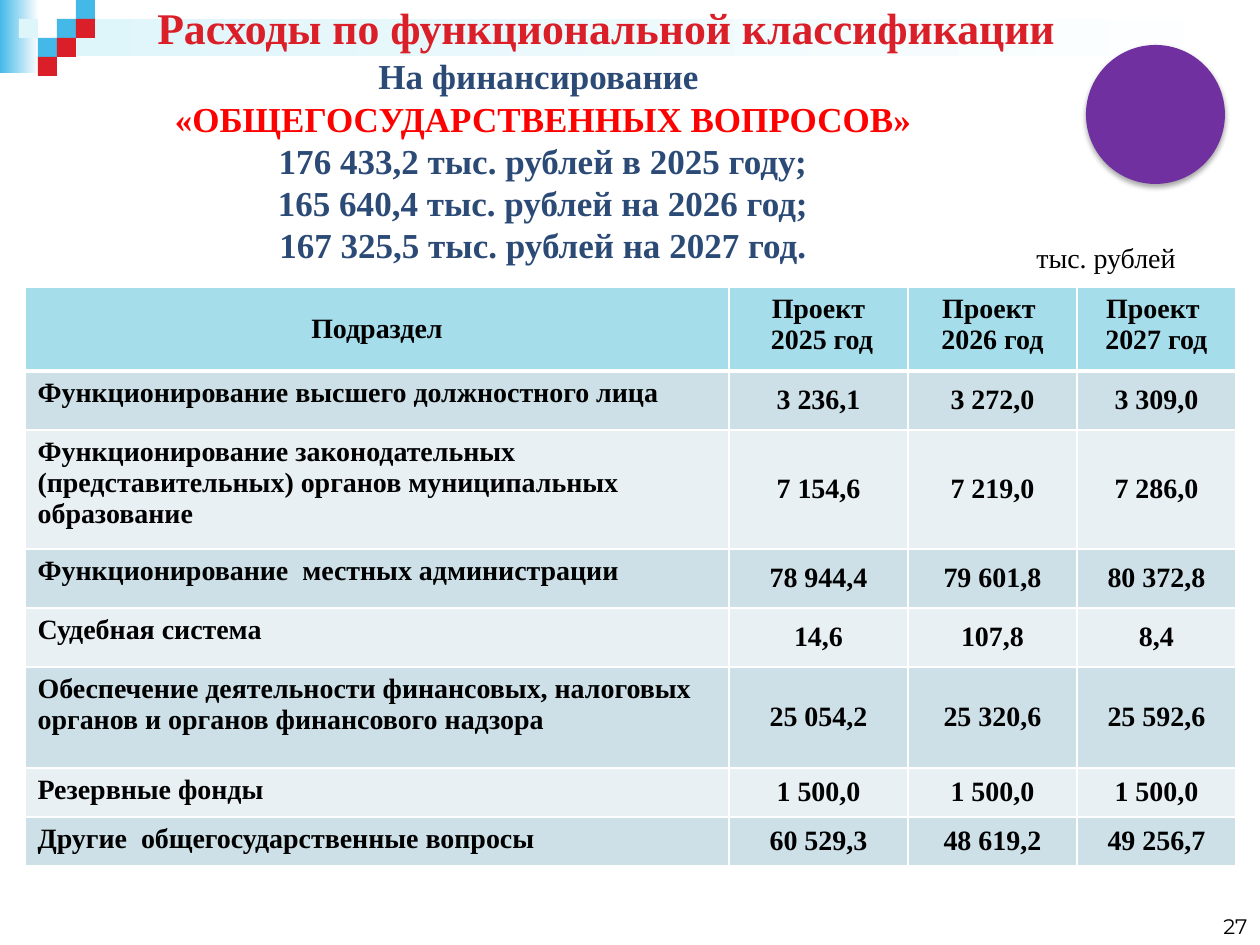
from lxml import etree
from pptx import Presentation
from pptx.dml.color import RGBColor
from pptx.enum.shapes import MSO_SHAPE
from pptx.enum.text import MSO_ANCHOR, PP_ALIGN
from pptx.oxml import parse_xml
from pptx.oxml.ns import nsdecls, qn
from pptx.util import Pt

RECT, OVAL = MSO_SHAPE.RECTANGLE, MSO_SHAPE.OVAL
TOP, MIDDLE, BOTTOM = MSO_ANCHOR.TOP, MSO_ANCHOR.MIDDLE, MSO_ANCHOR.BOTTOM
LEFT, CENTER, RIGHT = PP_ALIGN.LEFT, PP_ALIGN.CENTER, PP_ALIGN.RIGHT

BLACK = RGBColor(0x00, 0x00, 0x00)
WHITE = RGBColor(0xFF, 0xFF, 0xFF)
BLUE = RGBColor(0x44, 0xB9, 0xE8)
PALE = RGBColor(0xDE, 0xF5, 0xFA)
CRIMSON = RGBColor(0xDA, 0x1F, 0x28)
RED = RGBColor(0xFF, 0x00, 0x00)
NAVY = RGBColor(0x2B, 0x4A, 0x76)
PURPLE = RGBColor(0x70, 0x30, 0xA0)
HEAD = RGBColor(0xA6, 0xDD, 0xEA)
BANDS = [RGBColor(0xCD, 0xE0, 0xE8), RGBColor(0xE8, 0xF0, 0xF4)]

SERIF = "Times New Roman"
SCALE = 914400 / 126


def px(*values):
    return [round(v * SCALE) for v in values]


def write(tf, lines, align, colors, **fmt):
    """Put one paragraph per line; colors holds one colour for each line."""
    tf.word_wrap = True
    for i, (line, color) in enumerate(zip(lines, colors)):
        p = tf.paragraphs[0] if i == 0 else tf.add_paragraph()
        p.alignment = align
        r = p.add_run()
        r.text = line
        r.font.color.rgb = color
        for name, value in fmt.items():
            setattr(r.font, name, value)


prs = Presentation()
prs.slide_width, prs.slide_height = px(1260, 945)
s = prs.slides.add_slide(prs.slide_layouts[5])

# Gradient bands at the top
for box, color in [((0, 0, 39, 73), BLUE), ((57, 19, 1203, 37), PALE)]:
    sp = s.shapes.add_shape(RECT, *px(*box))
    sp.shadow.inherit = False
    sp.line.fill.background()
    sp.fill.gradient()
    sp.fill.gradient_angle = 0
    for stop, tone, position in zip(sp.fill.gradient_stops, (color, WHITE), (0, 1)):
        stop.color.rgb, stop.position = tone, position

# Corner mosaic: column, row, colour
TILE = 19
for col, row, color in [(3, 1, BLUE), (4, 0, BLUE), (4, 1, CRIMSON), (2, 2, BLUE),
                        (1, 1, PALE), (3, 2, CRIMSON), (2, 3, CRIMSON)]:
    sp = s.shapes.add_shape(RECT, *px(col * TILE, row * TILE, TILE, TILE))
    sp.shadow.inherit = False
    sp.fill.solid()
    sp.fill.fore_color.rgb = color
    sp.line.fill.background()

# Title, brought in front of the bands
title = s.shapes.title
s.shapes._spTree.append(title._element)
title.left, title.top, title.width, title.height = px(105, 0, 1002, 55)
title.text_frame.vertical_anchor = MIDDLE
write(title.text_frame, ["Расходы по функциональной классификации"], CENTER,
      [CRIMSON], name=SERIF, size=Pt(25), bold=True)

# Table
col_widths = [704, 179, 169, 159]
row_heights = [84, 59, 119, 59, 59, 101, 49, 49]
rows = [
    ("Подраздел", "Проект\n 2025 год", "Проект \n2026 год", "Проект \n2027 год"),
    ("Функционирование высшего должностного лица", "3 236,1", "3 272,0", "3 309,0"),
    ("Функционирование законодательных (представительных) органов муниципальных "
     "образование", "7 154,6", "7 219,0", "7 286,0"),
    ("Функционирование  местных администрации", "78 944,4", "79 601,8", "80 372,8"),
    ("Судебная система", "14,6", "107,8", "8,4"),
    ("Обеспечение деятельности финансовых, налоговых органов и органов финансового "
     "надзора", "25 054,2", "25 320,6", "25 592,6"),
    ("Резервные фонды", "1 500,0", "1 500,0", "1 500,0"),
    ("Другие  общегосударственные вопросы", "60 529,3", "48 619,2", "49 256,7"),
]
table = s.shapes.add_table(len(rows), len(col_widths),
                           *px(25, 287, sum(col_widths), sum(row_heights))).table
for column, width in zip(table.columns, px(*col_widths)):
    column.width = width
for table_row, height in zip(table.rows, px(*row_heights)):
    table_row.height = height

for i, row in enumerate(rows):
    for j, text in enumerate(row):
        cell = table.cell(i, j)
        is_header, is_label = i == 0, j == 0
        cell.vertical_anchor = MIDDLE if is_header == is_label else TOP
        if not is_header:
            cell.vertical_anchor = TOP if is_label else MIDDLE
        lines = text.split("\n")
        write(cell.text_frame, lines, LEFT if is_label and not is_header else CENTER,
              [BLACK] * len(lines), name=SERIF, size=Pt(16), bold=True)
        # White borders, thicker under the header; they precede the fill in tcPr
        tcPr = cell._tc.get_or_add_tcPr()
        for side in ("lnL", "lnR", "lnT", "lnB"):
            thick = (side == "lnB" and i == 0) or (side == "lnT" and i == 1)
            ln = etree.SubElement(tcPr, qn(f"a:{side}"), w=str(Pt(3 if thick else 1)))
            fill = etree.SubElement(ln, qn("a:solidFill"))
            etree.SubElement(fill, qn("a:srgbClr"), val=str(WHITE))
        cell.fill.solid()
        cell.fill.fore_color.rgb = HEAD if is_header else BANDS[(i - 1) % 2]

# Purple circle with a soft shadow
circle = s.shapes.add_shape(OVAL, *px(1086, 45, 139, 139))
circle.fill.solid()
circle.fill.fore_color.rgb = PURPLE
circle.line.fill.background()
circle._element.spPr.append(parse_xml(
    f'<a:effectLst {nsdecls("a")}><a:outerShdw blurRad="{Pt(3.1)}" dist="{Pt(1.8)}" '
    'dir="5400000" rotWithShape="0"><a:srgbClr val="000000"><a:alpha val="35000"/>'
    '</a:srgbClr></a:outerShdw></a:effectLst>'))

# Unit label, totals and slide number
totals = [
    "На финансирование ",
    "«ОБЩЕГОСУДАРСТВЕННЫХ ВОПРОСОВ»",
    "176 433,2 тыс. рублей в 2025 году;",
    "165 640,4 тыс. рублей на 2026 год;",
    "167 325,5 тыс. рублей на 2027 год.",
]
for box, anchor, lines, align, colors, fmt in [
    ((977, 234, 258, 47), TOP, ["тыс. рублей"], CENTER, [BLACK],
     dict(name=SERIF, size=Pt(16))),
    ((0, 56, 1086, 208), MIDDLE, totals, CENTER, [NAVY, RED, NAVY, NAVY, NAVY],
     dict(name=SERIF, size=Pt(20), bold=True)),
    ((966, 882, 294, 63), BOTTOM, ["27"], RIGHT, [BLACK],
     dict(name="Montserrat", size=Pt(12))),
]:
    tf = s.shapes.add_textbox(*px(*box)).text_frame
    tf.vertical_anchor = anchor
    write(tf, lines, align, colors, **fmt)

prs.save("out.pptx")
